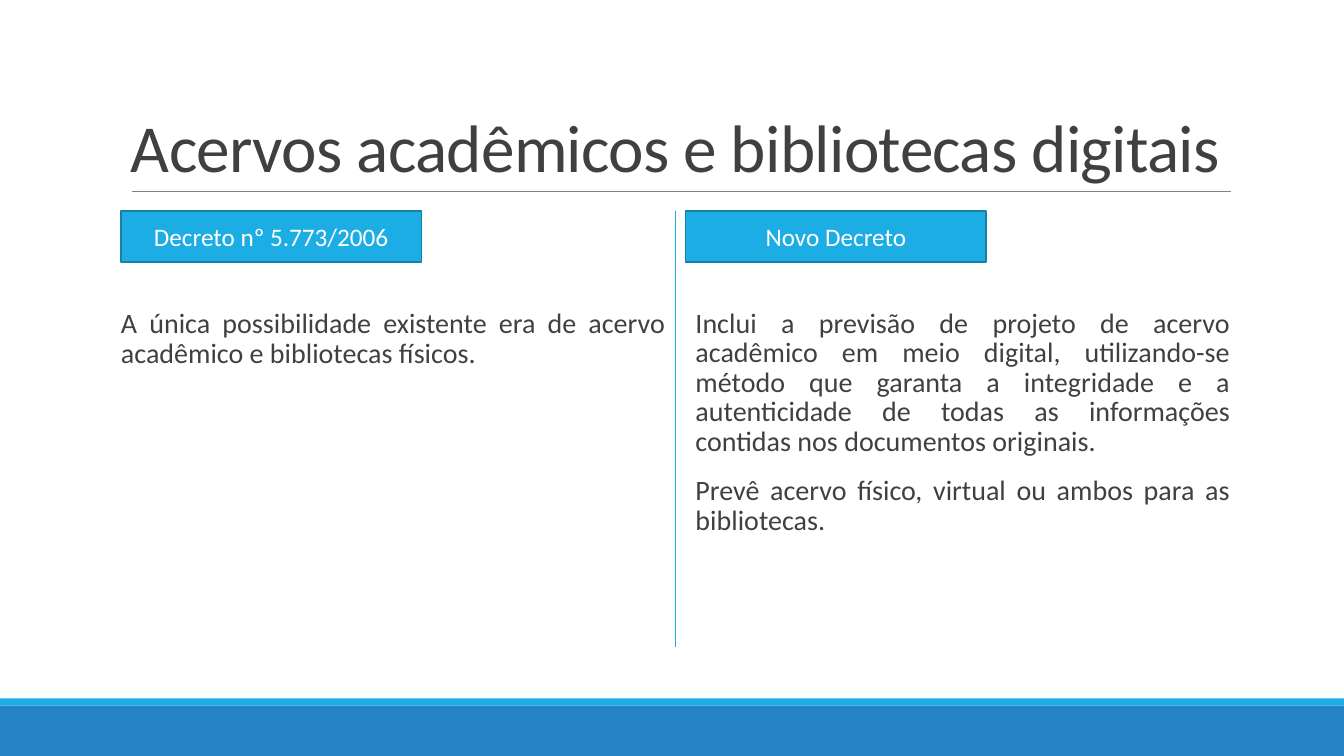
from dataclasses import dataclass

from lxml import etree
from pptx import Presentation
from pptx.dml.color import RGBColor
from pptx.enum.shapes import MSO_CONNECTOR, MSO_SHAPE
from pptx.enum.text import MSO_ANCHOR, PP_ALIGN
from pptx.oxml.ns import qn
from pptx.util import Inches, Pt

RECT = MSO_SHAPE.RECTANGLE
LINE = MSO_CONNECTOR.STRAIGHT
LEFT, CENTER, JUST = PP_ALIGN.LEFT, PP_ALIGN.CENTER, PP_ALIGN.JUSTIFY
TOP, MIDDLE, BOTTOM = MSO_ANCHOR.TOP, MSO_ANCHOR.MIDDLE, MSO_ANCHOR.BOTTOM
SKY, BLUE, EDGE = "1CADE4", "2683C6", "1580A9"
INK, GRAY, WHITE = "404040", "808080", "FFFFFF"
WIDE, HIGH = 13.33, 7.5


@dataclass
class Block:
    left: float
    top: float
    width: float
    height: float
    fill: str
    edge: str = ""
    text: str = ""


@dataclass
class Rule:
    start: tuple[float, float]
    end: tuple[float, float]
    color: str
    weight: float


@dataclass
class Column:
    left: float
    label: str
    paras: list[str]
    inset: float
    pitch: float


def paint(color, value: str) -> None:
    color.rgb = RGBColor.from_string(value)


def assign(target, values: dict) -> None:
    for name, value in values.items():
        setattr(target, name, value)


def write(shape, paras: list[str], size: float, color: str, frame: dict, form: dict) -> None:
    body = shape.text_frame
    assign(body, {"word_wrap": True} | frame)
    for index, text in enumerate(paras):
        para = body.add_paragraph() if index else body.paragraphs[0]
        assign(para, form)
        run = para.add_run()
        run.text = text
        assign(run.font, {"name": "Calibri", "size": Pt(size)})
        paint(run.font.color, color)


def box(slide, left: float, top: float, width: float, height: float):
    return slide.shapes.add_textbox(*map(Inches, (left, top, width, height)))


def draw_block(slide, item: Block) -> None:
    spot = map(Inches, (item.left, item.top, item.width, item.height))
    shape = slide.shapes.add_shape(RECT, *spot)
    shape.shadow.inherit = False
    shape.fill.solid()
    paint(shape.fill.fore_color, item.fill)
    if item.edge:
        paint(shape.line.color, item.edge)
        shape.line.width = Pt(1.25)
    else:
        shape.line.fill.background()
    if item.text:
        write(shape, [item.text], 18, WHITE,
              {"vertical_anchor": MIDDLE}, {"alignment": CENTER})


def draw_rule(slide, item: Rule) -> None:
    line = slide.shapes.add_connector(LINE, *map(Inches, item.start + item.end))
    paint(line.line.color, item.color)
    line.line.width = Pt(item.weight)
    etree.SubElement(line._element.spPr, qn("a:effectLst"))


def draw_title(slide, text: str) -> None:
    shape = box(slide, 1.2, 0.31, 11, 1.59)
    write(shape, [text], 48, INK, {"vertical_anchor": BOTTOM},
          {"alignment": LEFT, "line_spacing": 0.85})
    run = shape.text_frame.paragraphs[0].runs[0]
    run.font._element.set("spc", "-50")


def draw_column(slide, item: Column) -> None:
    shape = box(slide, item.left, 2.02, 5.4, 4.4)
    frame = {
        "vertical_anchor": TOP,
        "margin_left": Inches(item.inset),
        "margin_right": 0,
        "margin_top": Inches(1.05),
        "margin_bottom": Inches(0.05),
    }
    form = {
        "alignment": JUST,
        "line_spacing": item.pitch,
        "space_before": Pt(12),
        "space_after": Pt(2),
    }
    write(shape, item.paras, 20, INK, frame, form)


BANDS = [
    Block(0, 7, WIDE, 0.5, BLUE),
    Block(0, 6.93, WIDE, 0.07, SKY),
]
RULES = [
    Rule((1.31, 1.9), (12.21, 1.9), GRAY, 0.5),
    Rule((6.7, 2.09), (6.7, 6.42), SKY, 1),
]
COLUMNS = [
    Column(1.2, "Decreto nº 5.773/2006", [
        "A única possibilidade existente era de acervo acadêmico e "
        "bibliotecas físicos.",
    ], 0, 0.9),
    Column(6.8, "Novo Decreto", [
        "Inclui a previsão de projeto de acervo acadêmico em meio digital, "
        "utilizando-se método que garanta a integridade e a autenticidade "
        "de todas as informações contidas nos documentos originais.",
        "Prevê acervo físico, virtual ou ambos para as bibliotecas.",
    ], 0.1, 0.88),
]


def main() -> None:
    deck = Presentation()
    assign(deck, {"slide_width": Inches(WIDE), "slide_height": Inches(HIGH)})
    slide = deck.slides.add_slide(deck.slide_layouts[6])
    for band in BANDS:
        draw_block(slide, band)
    draw_title(slide, "Acervos acadêmicos e bibliotecas digitais")
    for column in COLUMNS:
        draw_column(slide, column)
    for rule in RULES:
        draw_rule(slide, rule)
    for column in COLUMNS:
        draw_block(slide, Block(column.left, 2.09, 2.98, 0.51, SKY, EDGE, column.label))
    deck.save("out.pptx")


if __name__ == "__main__":
    main()
